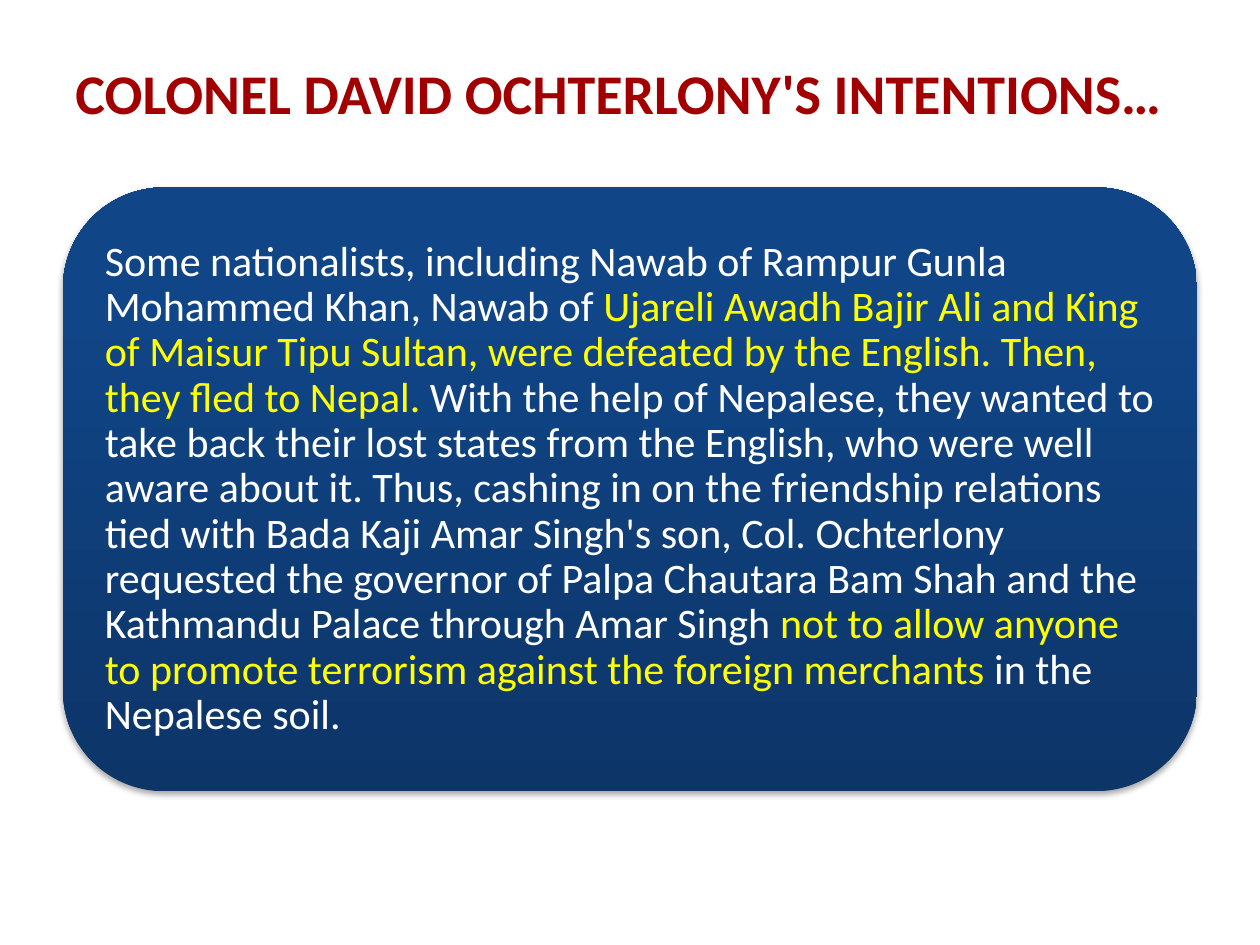
from copy import deepcopy
from dataclasses import dataclass

from lxml import etree
from pptx import Presentation
from pptx.dml.color import RGBColor
from pptx.enum.shapes import MSO_SHAPE
from pptx.enum.text import MSO_ANCHOR, MSO_AUTO_SIZE, PP_ALIGN
from pptx.oxml.ns import qn
from pptx.util import Cm, Pt

ROUND = MSO_SHAPE.ROUNDED_RECTANGLE
MIDDLE = MSO_ANCHOR.MIDDLE
LEFT = PP_ALIGN.LEFT
NO_FIT = MSO_AUTO_SIZE.NONE


@dataclass(frozen=True)
class Theme:
    font: str = "Calibri"
    head: str = "A20000"
    text: str = "FFFFFF"
    mark: str = "FFFF00"
    panel: tuple = ((0, "0D3568"), (0.8, "104587"), (1, "0E458A"))
    shade: str = "000000"
    head_size: int = 32
    text_size: int = 24


class Deck:
    def __init__(self, theme):
        self.theme = theme
        self.prs = Presentation()
        self.prs.slide_width, self.prs.slide_height = Cm(25.4), Cm(19.05)
        self.slide = self.prs.slides.add_slide(self.prs.slide_layouts[5])

    def style(self, run, size, color, bold=False):
        font = run.font
        font.name, font.size, font.bold = self.theme.font, Pt(size), bold
        font.color.rgb = RGBColor.from_string(color)

    def frame(self, shape):
        box = shape.text_frame
        box.word_wrap, box.auto_size = True, NO_FIT
        box.vertical_anchor = MIDDLE
        box.margin_left = box.margin_right = Cm(0.25)
        box.margin_top = box.margin_bottom = Cm(0.25)
        return box

    def title(self, text, x, y, w, h):
        shape = self.slide.shapes.title
        shape.left, shape.top, shape.width, shape.height = x, y, w, h
        box = self.frame(shape)
        box.text = text
        para = box.paragraphs[0]
        para.alignment = LEFT
        self.style(para.runs[0], self.theme.head_size, self.theme.head, True)

    def panel(self, parts, x, y, w, h):
        shape = self.slide.shapes.add_shape(ROUND, x, y, w, h)
        shape.line.fill.background()
        self.blend(shape)
        self.shadow(shape)
        para = self.frame(shape).paragraphs[0]
        para.alignment, para.line_spacing = LEFT, 0.9
        # Plain and marked passages
        for text, marked in parts:
            run = para.add_run()
            run.text = text
            color = self.theme.mark if marked else self.theme.text
            self.style(run, self.theme.text_size, color)

    def blend(self, shape):
        fill = shape.fill
        fill.gradient()
        fill.gradient_angle = 90
        stops = shape._element.spPr.find(qn("a:gradFill")).find(qn("a:gsLst"))
        stops.append(deepcopy(stops[0]))
        for stop, (place, color) in zip(fill.gradient_stops, self.theme.panel):
            stop.position = place
            stop.color.rgb = RGBColor.from_string(color)

    def shadow(self, shape):
        shape.shadow.inherit = False
        effects = shape._element.spPr.find(qn("a:effectLst"))
        outer = etree.SubElement(
            effects, qn("a:outerShdw"), blurRad=str(Pt(3.1)),
            dist=str(Pt(1.8)), dir="5400000", rotWithShape="0")
        color = etree.SubElement(outer, qn("a:srgbClr"), val=self.theme.shade)
        etree.SubElement(color, qn("a:alpha"), val="35000")


PARTS = (
    ("Some nationalists, including Nawab of Rampur Gunla Mohammed Khan, "
     "Nawab of ", False),
    ("Ujareli Awadh Bajir Ali and King of Maisur Tipu Sultan, were defeated "
     "by the English. Then, they fled to Nepal. ", True),
    ("With the help of Nepalese, they wanted to take back their lost states "
     "from the English, who were well aware about it. Thus, cashing in on "
     "the friendship relations tied with Bada Kaji Amar Singh's son, Col. "
     "Ochterlony requested the governor of Palpa Chautara Bam Shah and the "
     "Kathmandu Palace through Amar Singh ", False),
    ("not to allow anyone to promote terrorism against the foreign "
     "merchants ", True),
    ("in the Nepalese soil.", False),
)


def main():
    deck = Deck(Theme())
    side, wide = Cm(1.27), Cm(22.86)
    # Heading
    deck.title("COLONEL DAVID OCHTERLONY'S INTENTIONS…",
               side, Cm(0.76), wide, Cm(2.21))
    # Account
    deck.panel(PARTS, side, Cm(3.78), wide, Cm(12.17))
    deck.prs.save("out.pptx")


if __name__ == "__main__":
    main()
